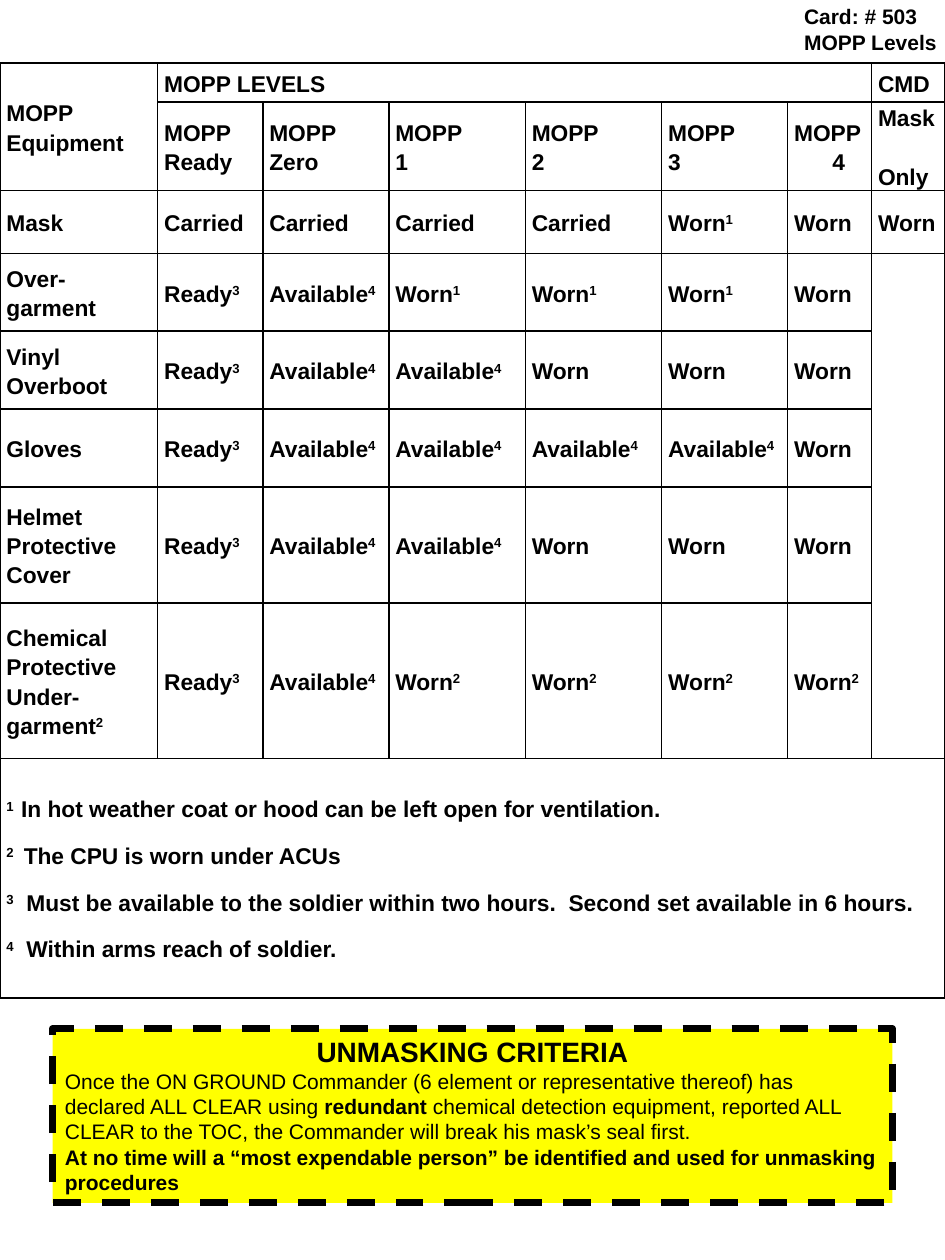
from dataclasses import dataclass

import lxml.etree
import pptx
import pptx.dml.color
import pptx.enum.dml
import pptx.enum.shapes
import pptx.enum.text
import pptx.oxml.ns
import pptx.util

Cm = pptx.util.Cm
Pt = pptx.util.Pt


@dataclass(frozen=True)
class Theme:
    font: str = "Arial"
    ink: str = "000000"
    highlight: str = "FFFF00"
    table_size: float = 13
    body_size: float = 12
    heading_size: float = 16
    grid_width: float = 1
    frame_width: float = 4
    line_spacing: float = 1.15
    space_after: float = 10


@dataclass(frozen=True)
class Run:
    text: str
    bold: bool = True
    raised: bool = False


@dataclass(frozen=True)
class Line:
    runs: tuple[Run, ...]
    after: float = 10
    indent: float = 0


@dataclass(frozen=True)
class Merge:
    top: int
    left: int
    bottom: int
    right: int


THEME = Theme()
COLUMN_WIDTHS = (3.18, 2.12, 2.54, 2.75, 2.75, 2.54, 1.69, 1.48)
ROW_HEIGHTS = (0.79, 1.75, 1.27, 1.57, 1.57, 1.57, 2.34, 3.13, 4.83)
MERGES = (Merge(0, 0, 1, 0), Merge(0, 1, 0, 6), Merge(3, 7, 7, 7), Merge(8, 0, 8, 7))

EQUIPMENT = (
    ("Mask", "Carried", "Carried", "Carried", "Carried", "Worn^1", "Worn", "Worn"),
    ("Over- garment", "Ready^3", "Available^4", "Worn^1", "Worn^1", "Worn^1", "Worn"),
    ("Vinyl Overboot", "Ready^3", "Available^4", "Available^4", "Worn", "Worn", "Worn"),
    ("Gloves", "Ready^3", "Available^4", "Available^4", "Available^4", "Available^4", "Worn"),
    ("Helmet Protective Cover", "Ready^3", "Available^4", "Available^4", "Worn", "Worn", "Worn"),
    ("Chemical Protective Under-garment^2", "Ready^3", "Available^4",
     "Worn^2", "Worn^2", "Worn^2", "Worn^2"),
)
NOTES = (
    ("1  ", "In hot weather coat or hood can be left open for ventilation."),
    ("2 ", " The CPU is worn under ACUs"),
    ("3", "  Must be available to the soldier within two hours.  Second set available in 6 hours."),
    ("4", "  Within arms reach of soldier."),
)


def color(value: str) -> pptx.dml.color.RGBColor:
    return pptx.dml.color.RGBColor.from_string(value)


def add_run(paragraph, run: Run, size: float) -> None:
    text_run = paragraph.add_run()
    text_run.text = run.text
    text_run.font.name = THEME.font
    text_run.font.size = Pt(size)
    text_run.font.bold = run.bold
    text_run.font.color.rgb = color(THEME.ink)
    if run.raised:
        text_run.font._element.set("baseline", "30000")


def add_lines(text_frame, lines: tuple[Line, ...], size: float) -> None:
    for index, line in enumerate(lines):
        paragraph = text_frame.paragraphs[0] if index == 0 else text_frame.add_paragraph()
        paragraph.alignment = pptx.enum.text.PP_ALIGN.LEFT
        paragraph.space_after = Pt(line.after)
        if line.indent:
            paragraph._p.get_or_add_pPr().set("marL", str(Cm(line.indent)))
        for run in line.runs:
            add_run(paragraph, run, size)


def marked_line(text: str) -> tuple[Line, ...]:
    word, _, mark = text.partition("^")
    runs = (Run(word), Run(mark, raised=True)) if mark else (Run(word),)
    return (Line(runs),)


def stacked(first: str, second: str, gap: float = 0, indent: float = 0) -> tuple[Line, ...]:
    return (Line((Run(first),), after=gap), Line((Run(second),), indent=indent))


def draw_borders(cell) -> None:
    properties = cell._tc.get_or_add_tcPr()
    qualified = pptx.oxml.ns.qn
    for position, side in enumerate(("a:lnL", "a:lnR", "a:lnT", "a:lnB")):
        border = lxml.etree.Element(qualified(side), w=str(Pt(THEME.grid_width)))
        fill = lxml.etree.SubElement(border, qualified("a:solidFill"))
        lxml.etree.SubElement(fill, qualified("a:srgbClr"), val=THEME.ink)
        properties.insert(position, border)


def fill_cell(cell, lines: tuple[Line, ...]) -> None:
    add_lines(cell.text_frame, lines, THEME.table_size)
    for paragraph in cell.text_frame.paragraphs:
        paragraph.line_spacing = THEME.line_spacing


def add_levels_table(slide) -> None:
    table = slide.shapes.add_table(
        len(ROW_HEIGHTS), len(COLUMN_WIDTHS), Cm(0), Cm(1.27),
        Cm(sum(COLUMN_WIDTHS)), Cm(sum(ROW_HEIGHTS)),
    ).table
    table.first_row = False
    table.horz_banding = False
    for column, width in zip(table.columns, COLUMN_WIDTHS):
        column.width = Cm(width)
    for row, height in zip(table.rows, ROW_HEIGHTS):
        row.height = Cm(height)
    for cell in table.iter_cells():
        cell.margin_left = cell.margin_right = Cm(0.13)
        cell.margin_top = cell.margin_bottom = Cm(0)
        cell.vertical_anchor = pptx.enum.text.MSO_ANCHOR.MIDDLE
        cell.fill.background()
        draw_borders(cell)
    for merge in MERGES:
        table.cell(merge.top, merge.left).merge(table.cell(merge.bottom, merge.right))

    for column, title in ((0, "MOPP Equipment"), (1, "MOPP LEVELS"), (7, "CMD")):
        fill_cell(table.cell(0, column), marked_line(title))
    for column, level in enumerate(("Ready", "Zero", "1", "2", "3"), start=1):
        fill_cell(table.cell(1, column), stacked("MOPP", level))
    fill_cell(table.cell(1, 6), stacked("MOPP", "4", indent=0.77))
    fill_cell(table.cell(1, 7), stacked("Mask", "Only", gap=17))
    for row, entries in enumerate(EQUIPMENT, start=2):
        for column, entry in enumerate(entries):
            fill_cell(table.cell(row, column), marked_line(entry))
    notes = tuple(Line((Run(mark, raised=True), Run(text))) for mark, text in NOTES)
    fill_cell(table.cell(8, 0), notes)


def add_unmasking_panel(slide) -> None:
    panel = slide.shapes.add_shape(
        pptx.enum.shapes.MSO_SHAPE.RECTANGLE, Cm(1.06), Cm(20.74), Cm(16.93), Cm(3.51))
    panel.shadow.inherit = False
    panel.fill.solid()
    panel.fill.fore_color.rgb = color(THEME.highlight)
    panel.line.color.rgb = color(THEME.ink)
    panel.line.width = Pt(THEME.frame_width)
    panel.line.dash_style = pptx.enum.dml.MSO_LINE.DASH
    frame = panel.text_frame
    frame.word_wrap = True
    frame.vertical_anchor = pptx.enum.text.MSO_ANCHOR.TOP
    heading = frame.paragraphs[0]
    heading.alignment = pptx.enum.text.PP_ALIGN.CENTER
    add_run(heading, Run("UNMASKING CRITERIA"), THEME.heading_size)
    for runs in (
        (Run("Once the ON GROUND Commander (6 element or representative thereof) has "
             "declared ALL CLEAR using ", bold=False),
         Run("redundant"),
         Run(" chemical detection equipment, reported ALL CLEAR to the TOC, the Commander "
             "will break his mask’s seal first.", bold=False)),
        (Run("At no time will a “most expendable person” be identified and used for "
             "unmasking procedures"),),
    ):
        paragraph = frame.add_paragraph()
        paragraph.alignment = pptx.enum.text.PP_ALIGN.LEFT
        for run in runs:
            add_run(paragraph, run, THEME.body_size)


def add_card_label(slide) -> None:
    frame = slide.shapes.add_textbox(Cm(16.08), Cm(0), Cm(2.97), Cm(2.11)).text_frame
    frame.word_wrap = True
    frame.margin_left = frame.margin_right = Cm(0.13)
    frame.margin_top = frame.margin_bottom = Cm(0.08)
    add_lines(frame, stacked("Card: # 503", "MOPP Levels"), THEME.body_size)


def main() -> None:
    presentation = pptx.Presentation()
    presentation.slide_width = Cm(19.05)
    presentation.slide_height = Cm(25.4)
    slide = presentation.slides.add_slide(presentation.slide_layouts[6])
    add_levels_table(slide)
    add_unmasking_panel(slide)
    add_card_label(slide)
    presentation.save("out.pptx")


if __name__ == "__main__":
    main()
